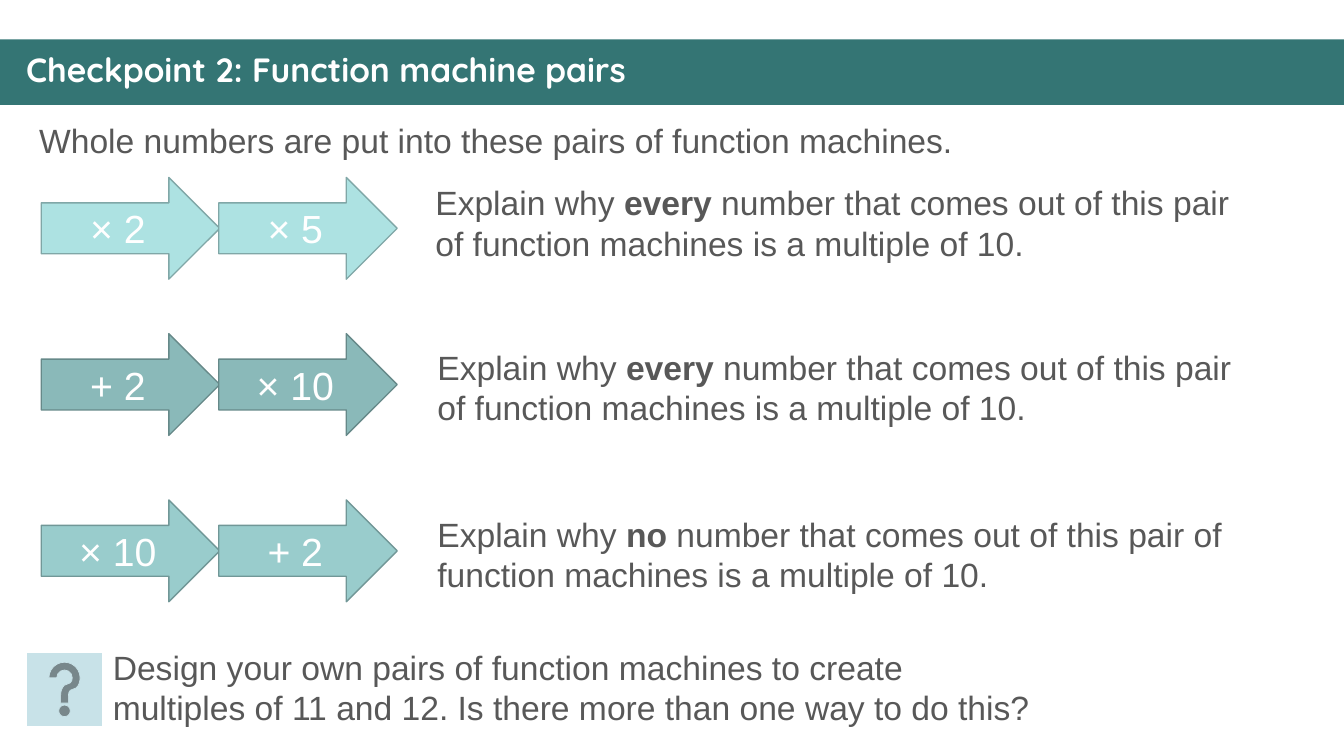
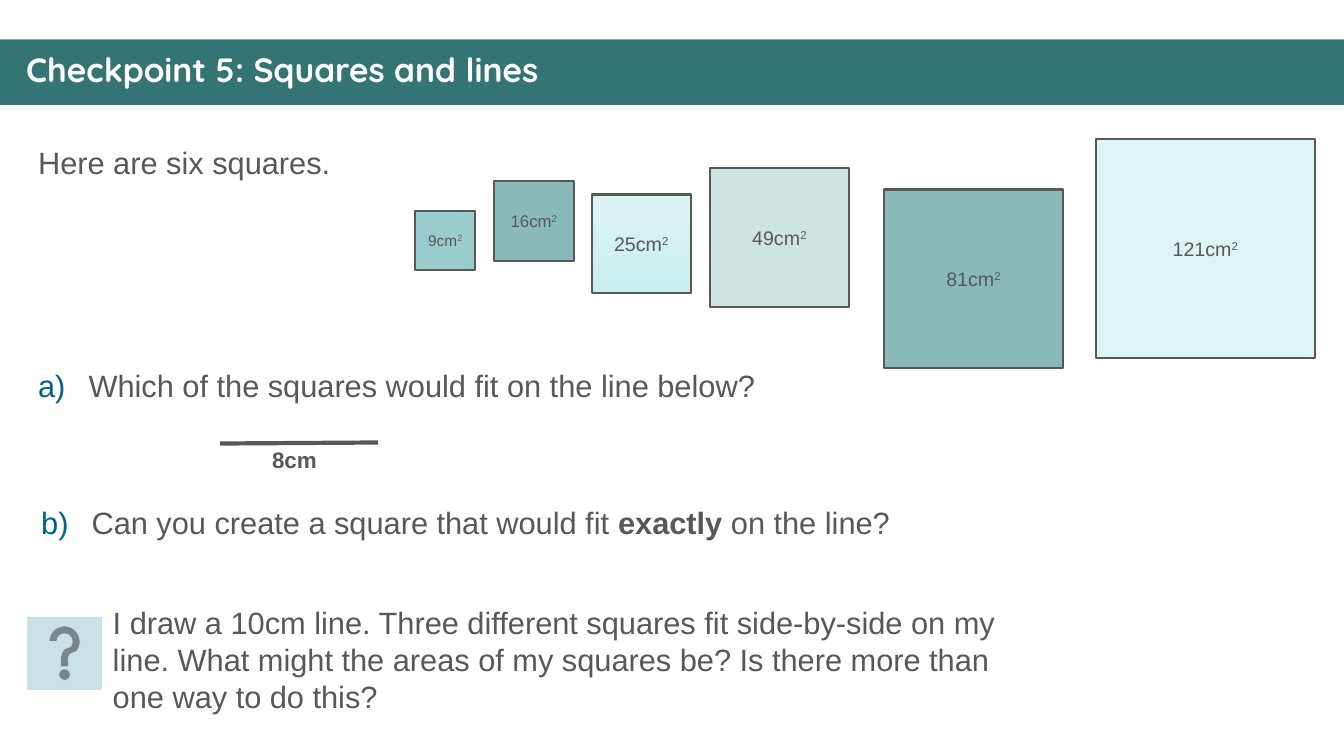
from lxml import etree
from pptx import Presentation
from pptx.dml.color import RGBColor
from pptx.enum.shapes import MSO_CONNECTOR, MSO_SHAPE
from pptx.enum.text import MSO_ANCHOR, MSO_AUTO_SIZE, PP_ALIGN
from pptx.oxml.ns import qn
from pptx.util import Inches, Pt

BAND, WHITE, INK = "347574", "FFFFFF", "585858"
HELP, NUMBERING = "C8E2E8", "00628C"
color = RGBColor.from_string


def add_shape(slide, preset, box, fill, outline, width):
    shape = slide.shapes.add_shape(preset, *map(Inches, box))
    shape.shadow.inherit = False
    shape.fill.solid()
    shape.fill.fore_color.rgb = color(fill)
    shape.line.color.rgb = color(outline)
    shape.line.width = Pt(width)
    return shape


def write(shape, parts, size, ink=INK, align=PP_ALIGN.LEFT):
    """Fill the shape with one paragraph, one run per part, and return it."""
    shape.text_frame.word_wrap = True
    paragraph = shape.text_frame.paragraphs[0]
    paragraph.alignment = align
    paragraph.space_before = Pt(3)
    for part in parts:
        run = paragraph.add_run()
        run.text = part
        run.font.name = "Arial"
        run.font.size = Pt(size)
        run.font.color.rgb = color(ink)
    return paragraph


prs = Presentation()
prs.slide_width, prs.slide_height = Inches(13.33), Inches(7.5)
layout = prs.slide_layouts[5]
title_place = layout.placeholders[0]
title_place.left, title_place.top = Inches(0.16), Inches(0.48)
title_place.width, title_place.height = Inches(13.04), Inches(0.47)

# Each text: box, parts (the second part is bold), number in the a) b) list
ending = " of function machines is a multiple of 10."
every_pair = ["Explain why ", "every", " number that comes out of this pair" + ending]
no_pair = ["Explain why ", "no", " number that comes out of this pair" + ending]
checkpoints = [
    ("Checkpoint 2: Function machine pairs", 24, 6.48, [
        ((0.29, 1.14, 12.12, 0.5),
         ["Whole numbers are put into these pairs of function machines."], None),
        ((4.22, 1.76, 8.43, 0.91), every_pair, None),
        ((4.24, 3.39, 8.43, 0.91), every_pair, None),
        ((4.24, 5.05, 8.43, 0.91), no_pair, None),
        ((1.02, 6.37, 9.31, 0.91),
         ["Design your own pairs of function machines to create multiples of 11 "
          "and 12. Is there more than one way to do this?"], None),
    ]),
    ("Checkpoint 5: Squares and lines", 22, 6.12, [
        ((0.28, 1.38, 3.14, 0.47), ["Here are six squares."], None),
        ((0.28, 3.59, 7.4, 0.47),
         ["Which of the squares would fit on the line below?"], 1),
        ((0.31, 4.95, 8.81, 0.47),
         ["Can you create a square that would fit ", "exactly", " on the line?"], 2),
        ((1.02, 5.94, 9.23, 1.21),
         ["I draw a 10cm line. Three different squares fit side-by-side on my "
          "line. What might the areas of my squares be? Is there more than one "
          "way to do this?"], None),
    ]),
]

slides = []
for heading, size, help_top, texts in checkpoints:
    slide = prs.slides.add_slide(layout)
    slides.append(slide)

    title = slide.shapes.title
    title.text_frame.text = heading
    title.text_frame.auto_size = MSO_AUTO_SIZE.NONE
    title.text_frame.vertical_anchor = MSO_ANCHOR.MIDDLE
    heading_line = title.text_frame.paragraphs[0]
    heading_line.alignment = PP_ALIGN.LEFT
    heading_line.line_spacing = 0.9
    heading_font = heading_line.runs[0].font
    heading_font.name, heading_font.size, heading_font.bold = "Quicksand", Pt(24), True
    heading_font.color.rgb = color(WHITE)

    for box, parts, number in texts:
        text_box = slide.shapes.add_textbox(*map(Inches, box))
        paragraph = write(text_box, parts, size)
        text_box.text_frame.auto_size = MSO_AUTO_SIZE.SHAPE_TO_FIT_TEXT
        for emphasis in paragraph.runs[1:2]:
            emphasis.font.bold = True
        if number:
            props = paragraph._p.get_or_add_pPr()
            props.set("marL", str(Inches(0.5)))
            props.set("indent", str(-Inches(0.5)))
            bullet_color = etree.SubElement(props, qn("a:buClr"))
            etree.SubElement(bullet_color, qn("a:srgbClr"), val=NUMBERING)
            etree.SubElement(props, qn("a:buAutoNum"),
                             type="alphaLcParenR", startAt=str(number))

    add_shape(slide, MSO_SHAPE.ACTION_BUTTON_HELP,
              (0.27, help_top, 0.74, 0.72), HELP, HELP, 0.5)

machines_slide, squares_slide = slides

# The title band belongs to the layout, behind its placeholders
band = add_shape(machines_slide, MSO_SHAPE.RECTANGLE,
                 (0, 0.39, 13.33, 0.65), BAND, BAND, 1)
band.line.fill.background()
layout.shapes.element.insert(2, band.element)

machine_pairs = [
    (1.76, "ADE2E2", "80A7A7", ("× 2", "× 5")),
    (3.31, "8AB9B9", "668989", ("+ 2", "× 10")),
    (4.96, "99CCCC", "719797", ("× 10", "+ 2")),
]
for top, fill, outline, operations in machine_pairs:
    for step, operation in enumerate(operations):
        machine = add_shape(machines_slide, MSO_SHAPE.RIGHT_ARROW,
                            (0.41 + 1.76 * step, top, 1.77, 1.01), fill, outline, 1)
        write(machine, [operation], 28, WHITE, PP_ALIGN.CENTER)

squares = [
    (9, 4.12, 2.09, 0.59, 11, "99CCCC"),
    (16, 4.9, 1.8, 0.79, 12, "8AB9B9"),
    (25, 5.87, 1.93, 0.98, 14, "D0EEEE"),
    (49, 7.04, 1.67, 1.38, 14, "D0E3E3"),
    (81, 8.77, 1.88, 1.77, 14, "8AB9B9"),
    (121, 10.87, 1.38, 2.17, 14, "DEF3F3"),
]
for area, left, top, side, size, fill in squares:
    square = add_shape(squares_slide, MSO_SHAPE.RECTANGLE,
                       (left, top, side, side), fill, INK, 1.5)
    label = write(square, [f"{area}cm", "2"], size, align=PP_ALIGN.CENTER)
    label.runs[1]._r.get_or_add_rPr().set("baseline", "30000")
    if area == 25:
        square.fill.gradient()
        square.fill.gradient_angle = 270
        for stop, shade in zip(square.fill.gradient_stops, ("DDF3F3", "C9EEEE")):
            stop.color.rgb = color(shade)
    if area == 9:
        square.text_frame.margin_left = square.text_frame.margin_right = Inches(0.05)

ruler = squares_slide.shapes.add_connector(
    MSO_CONNECTOR.STRAIGHT, Inches(2.18), Inches(4.4), Inches(3.75), Inches(4.39))
ruler.line.color.rgb = color(INK)
ruler.line.width = Pt(3)
etree.SubElement(ruler.element.spPr, qn("a:effectLst"))
ruler_label = squares_slide.shapes.add_textbox(*map(Inches, (2.6, 4.38, 0.92, 0.37)))
write(ruler_label, ["8cm"], 16).runs[0].font.bold = True

prs.save("out.pptx")
